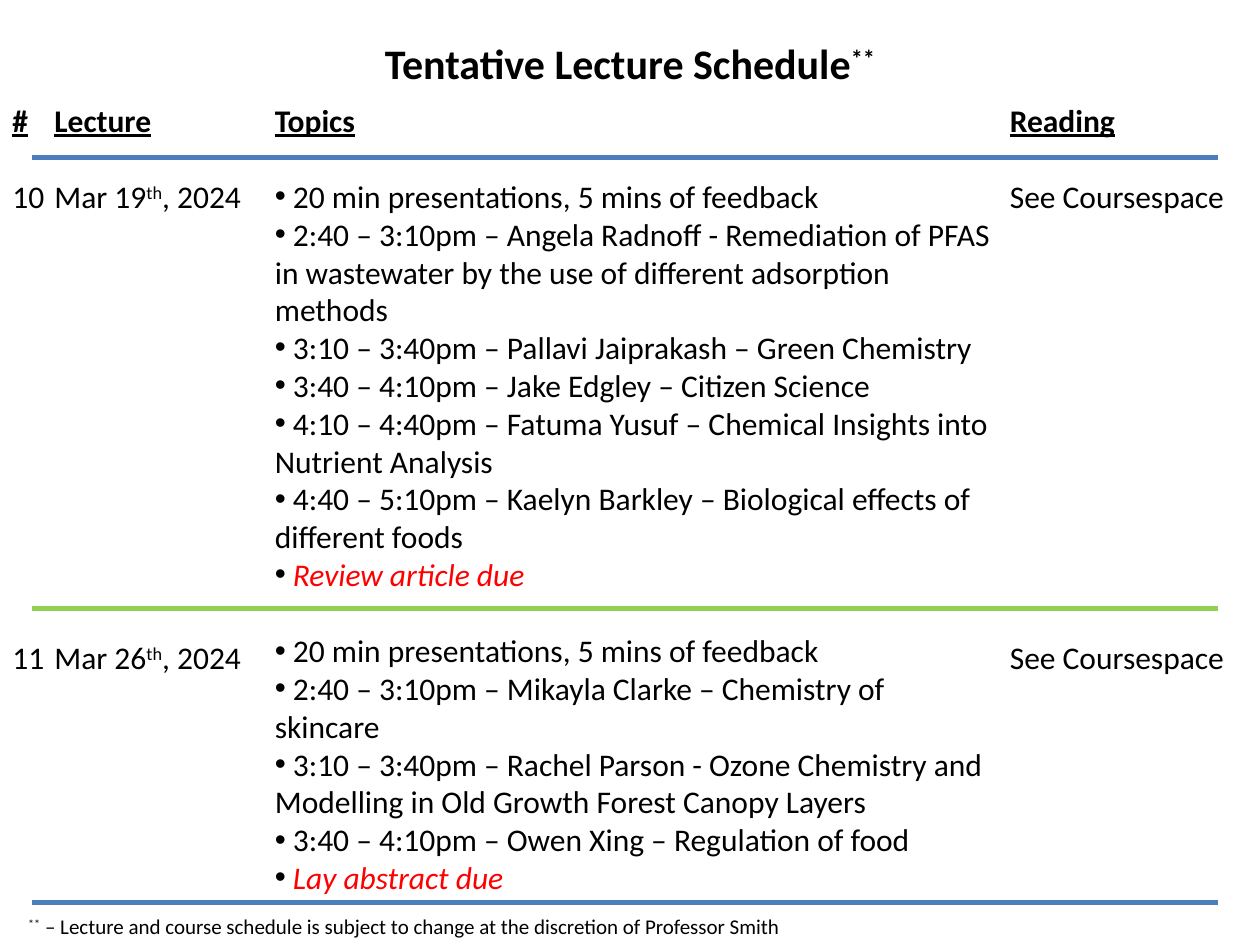
from dataclasses import dataclass
from lxml.etree import SubElement as Sub
from pptx import Presentation
from pptx.dml.color import RGBColor as Rgb
from pptx.enum.shapes import MSO_CONNECTOR as Link
from pptx.enum.text import MSO_AUTO_SIZE as Fit, PP_ALIGN as Align
from pptx.oxml.ns import qn
from pptx.util import Inches, Pt


@dataclass(frozen=True)
class Theme:
    font: str = "Calibri"
    ink: str = "000000"
    due: str = "FF0000"
    blue: str = "4B7EBC"
    green: str = "92D050"
    title: int = 24
    body: int = 18
    note: int = 12
    line: int = 22
    rule: int = 3


LOOK = Theme()
WIDE, HIGH = Inches(10), Inches(7.5)
COLS, ROWS = 120, 30
TOP = 3

FIRST = [
    "20 min presentations, 5 mins of feedback",
    "2:40 – 3:10pm – Angela Radnoff - Remediation of PFAS in wastewater "
    "by the use of different adsorption methods",
    "3:10 – 3:40pm – Pallavi Jaiprakash – Green Chemistry",
    "3:40 – 4:10pm – Jake Edgley – Citizen Science",
    "4:10 – 4:40pm – Fatuma Yusuf – Chemical Insights into Nutrient Analysis",
    "4:40 – 5:10pm – Kaelyn Barkley – Biological effects of different foods",
    "|Review article due",
]
SECOND = [
    "20 min presentations, 5 mins of feedback",
    "2:40 – 3:10pm – Mikayla Clarke – Chemistry of skincare",
    "3:10 – 3:40pm – Rachel Parson - Ozone Chemistry and Modelling "
    "in Old Growth Forest Canopy Layers",
    "3:40 – 4:10pm – Owen Xing – Regulation of food",
    "|Lay abstract due",
]


def place(col, row, wide, high):
    return (int(WIDE * col / COLS), int(HIGH * row / ROWS),
            int(WIDE * wide / COLS), int(HIGH * high / ROWS))


def frame(slide, box, wrap=True):
    text = slide.shapes.add_textbox(*place(*box)).text_frame
    text.word_wrap = wrap
    text.auto_size = Fit.SHAPE_TO_FIT_TEXT
    return text


def lift(run):
    run.font._element.set("baseline", "30000")


def flag(run):
    run.font.italic = True
    run.font.color.rgb = Rgb.from_string(LOOK.due)


def write(para, text, size, bold=False, mark=lift):
    for turn, part in enumerate(text.split("|")):
        if not part:
            continue
        run = para.add_run()
        run.text = part
        font = run.font
        font.name, font.size, font.bold = LOOK.font, Pt(size), bold
        font.color.rgb = Rgb.from_string(LOOK.ink)
        if turn % 2:
            mark(run)


def dot(para):
    props = para._p.get_or_add_pPr()
    props.set("marL", "0")
    props.set("indent", "0")
    Sub(props, qn("a:buFont")).set("typeface", "Arial")
    Sub(props, qn("a:buChar")).set("char", "•")


def title(slide, box, text):
    para = frame(slide, box).paragraphs[0]
    para.alignment = Align.CENTER
    write(para, text, LOOK.title, True)


def header(text, name):
    para = text.paragraphs[0]
    write(para, name, LOOK.body, True)
    para.runs[0].font.underline = True


def column(slide, box, name, cells, gap=11):
    text = frame(slide, box)
    header(text, name)
    for cell, skip in zip(cells, (1, gap)):
        para = text.add_paragraph()
        para.space_before = Pt(skip * LOOK.line)
        write(para, cell, LOOK.body)


def topics(slide, box, name, groups):
    text = frame(slide, box)
    header(text, name)
    for group in groups:
        for place_no, item in enumerate(group):
            para = text.add_paragraph()
            para.space_before = Pt(0 if place_no else LOOK.line)
            dot(para)
            write(para, " " + item, LOOK.body, mark=flag)


def rule(slide, row, color):
    left, top, wide, _ = place(3, row, 113, 0)
    line = slide.shapes.add_connector(Link.STRAIGHT, left, top, left + wide, top)
    line.line.color.rgb = Rgb.from_string(color)
    line.line.width = Pt(LOOK.rule)
    Sub(line._element.spPr, qn("a:effectLst"))


def note(slide, box, text):
    write(frame(slide, box, False).paragraphs[0], text, LOOK.note)


def main():
    deck = Presentation()
    deck.slide_width, deck.slide_height = WIDE, HIGH
    slide = deck.slides.add_slide(deck.slide_layouts[6])
    title(slide, (35, 1, 50, 2), "Tentative Lecture Schedule|**")
    for col, wide, name, cells in (
        (0, 8, "#", ("10", "11")),
        (4, 21, "Lecture", ("Mar 19|th|, 2024", "Mar 26|th|, 2024")),
        (95, 23, "Reading", ("See Coursespace",) * 2),
    ):
        column(slide, (col, TOP, wide, 18.56), name, cells)
    topics(slide, (25, TOP, 71, 25.84), "Topics", (FIRST, SECOND))
    for row, color in ((5, LOOK.blue), (19.32, LOOK.green), (28.66, LOOK.blue)):
        rule(slide, row, color)
    note(slide, (1.5, 28.8, 75, 1.2),
         "|**| – Lecture and course schedule is subject to change "
         "at the discretion of Professor Smith")
    deck.save("out.pptx")


if __name__ == "__main__":
    main()
